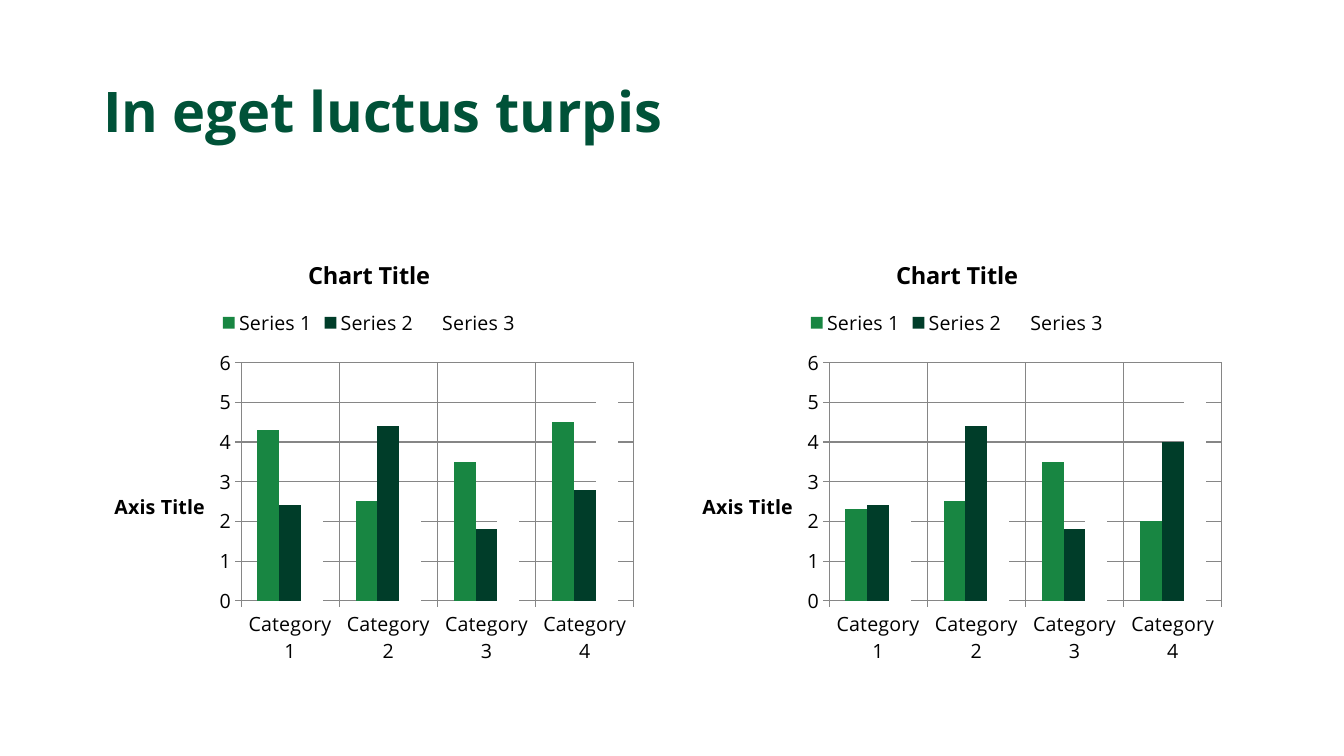
from pptx import Presentation
from pptx.chart.data import CategoryChartData as ChartData
from pptx.dml.color import RGBColor
from pptx.enum.chart import XL_CHART_TYPE as Kind, XL_LEGEND_POSITION as Legend
from pptx.enum.chart import XL_TICK_MARK as Tick
from pptx.enum.text import MSO_ANCHOR as Anchor, PP_ALIGN as Align
from pptx.util import Pt

# Content
TITLE = "In eget luctus turpis"
HEAD, SIDE = "Chart Title", "Axis Title"
CATS = [f"Category {n}" for n in range(1, 5)]
CHARTS = [
    [(4.3, 2.5, 3.5, 4.5), (2.4, 4.4, 1.8, 2.8), (2, 2, 3, 5)],
    [(2.3, 2.5, 3.5, 2), (2.4, 4.4, 1.8, 4), (3, 2, 3, 5)],
]

# Style
FONT = "Open Sans"
GREEN = RGBColor(0x00, 0x52, 0x38)
BLACK = RGBColor(0, 0, 0)
GREY = RGBColor(0x86, 0x86, 0x86)
FILLS = [RGBColor(0x18, 0x86, 0x42), RGBColor(0x00, 0x3D, 0x29),
         RGBColor(0xFF, 0xFF, 0xFF)]

# Layout in px
WIDE, HIGH = 1344, 756
LEFT, TOP, STEP = 93, 238, 588
CHART_W, CHART_H = 552, 436


def px(n):
    return round(n * 914400 / 100.8)


def style(font, size, color, bold=False):
    font.name, font.size, font.bold = FONT, Pt(size), bold
    font.color.rgb = color


def label(owner, text, size):
    frame = owner.text_frame
    frame.text = text
    style(frame.paragraphs[0].runs[0].font, size, BLACK, True)
    return frame


def add_bars(slide, left, rows):
    data = ChartData()
    data.categories = CATS
    for n, vals in enumerate(rows, 1):
        data.add_series(f"Series {n}", vals)
    chart = slide.shapes.add_chart(
        Kind.COLUMN_CLUSTERED, px(left), px(TOP), px(CHART_W), px(CHART_H),
        data).chart
    style(chart.font, 14, BLACK)

    # Title and legend
    chart.has_title = True
    label(chart.chart_title, HEAD, 16.8)
    chart.chart_title.include_in_layout = False
    chart.has_legend = True
    chart.legend.position = Legend.TOP
    chart.legend.include_in_layout = False

    # Axes
    for axis in (chart.category_axis, chart.value_axis):
        axis.has_major_gridlines = True
        axis.major_tick_mark = Tick.OUTSIDE
        axis.minor_tick_mark = Tick.NONE
        for line in (axis.format.line, axis.major_gridlines.format.line):
            line.color.rgb = GREY
            line.width = Pt(0.75)
    scale = chart.value_axis
    scale.minimum_scale, scale.maximum_scale, scale.major_unit = 0, 6, 1
    body = label(scale.axis_title, SIDE, 14)._txBody.bodyPr
    body.set("rot", "0")
    body.set("vert", "horz")

    # Columns
    plot = chart.plots[0]
    plot.gap_width, plot.overlap = 150, 0
    plot.vary_by_categories = False
    for bar, color in zip(plot.series, FILLS):
        bar.invert_if_negative = False
        bar.format.fill.solid()
        bar.format.fill.fore_color.rgb = color


def main():
    deck = Presentation()
    deck.slide_width, deck.slide_height = px(WIDE), px(HIGH)
    slide = deck.slides.add_slide(deck.slide_layouts[5])

    # Slide title
    title = slide.shapes.title
    title.left, title.top, title.width, title.height = map(
        px, (LEFT, 79, 985, 146))
    frame = title.text_frame
    frame.text = TITLE
    frame.word_wrap = True
    frame.vertical_anchor = Anchor.TOP
    para = frame.paragraphs[0]
    para.alignment, para.line_spacing = Align.LEFT, 0.9
    style(para.runs[0].font, 40, GREEN, True)

    # Charts side by side
    for n, rows in enumerate(CHARTS):
        add_bars(slide, LEFT + n * STEP, rows)
    deck.save("out.pptx")


if __name__ == "__main__":
    main()
